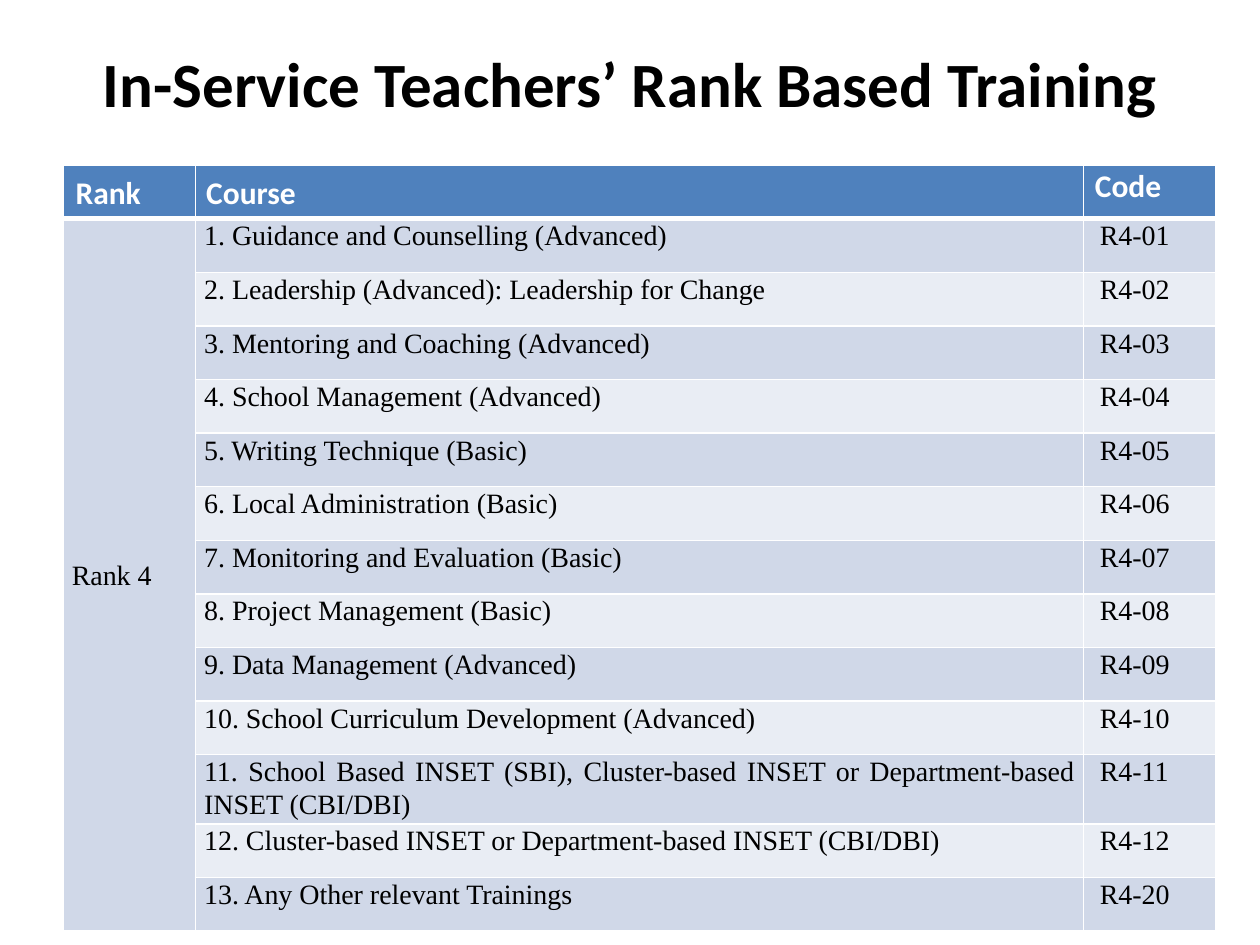
from lxml import etree
from pptx import Presentation
from pptx.dml.color import RGBColor
from pptx.enum.text import MSO_ANCHOR, MSO_AUTO_SIZE, PP_ALIGN
from pptx.oxml.ns import qn
from pptx.util import Inches, Pt

TITLE = "In-Service Teachers’ Rank Based Training"
HEADINGS = ("Rank", " Course", "Code")
RANK = "Rank 4"
COURSES = [
    ("Guidance and Counselling (Advanced)", "R4-01"),
    ("Leadership (Advanced): Leadership for Change", "R4-02"),
    ("Mentoring and Coaching (Advanced)", "R4-03"),
    ("School Management (Advanced)", "R4-04"),
    ("Writing Technique (Basic)", "R4-05"),
    ("Local Administration (Basic)", "R4-06"),
    ("Monitoring and Evaluation (Basic)", "R4-07"),
    ("Project Management (Basic)", "R4-08"),
    ("Data Management (Advanced)", "R4-09"),
    ("School Curriculum Development (Advanced)", "R4-10"),
    ("School Based INSET (SBI), Cluster-based INSET or Department-based "
     "INSET (CBI/DBI)", "R4-11"),
    ("Cluster-based INSET or Department-based INSET (CBI/DBI)", "R4-12"),
    ("Any Other relevant Trainings", "R4-20"),
]
THEME = {
    "title": {"name": "Calibri", "size": Pt(36), "bold": True, "color": "000000"},
    "heading": {"name": "Calibri", "size": Pt(18), "bold": True, "color": "FFFFFF"},
    "body": {"name": "Times New Roman", "size": Pt(16), "bold": False, "color": "000000"},
    "heading_fill": "4F81BD",
    "bands": ("D0D8E8", "E9EDF4"),
    "border": "FFFFFF",
}
COLUMN_WIDTHS = (1.05, 7.05, 1.05)
TABLE_LEFT, TABLE_TOP, TABLE_HEIGHT = 0.5, 1.31, 6.08
LONG_ROW, LONG_HEIGHT = 11, 0.55
CODE_INDENT = 0.06
RANK_COLUMN, COURSE_COLUMN, CODE_COLUMN = range(3)
# left, top, right, bottom
HEADING_MARGINS = ((0.1, 0.05, 0.1, 0.05), (0.03, 0, 0.08, 0), (0.03, 0, 0.08, 0))
BODY_MARGINS = (0.07, 0, 0.07, 0)


def set_all(target, values):
    for attribute, value in values.items():
        setattr(target, attribute, value)


def style_font(font, style):
    set_all(font, {key: value for key, value in style.items() if key != "color"})
    font.color.rgb = RGBColor.from_string(style["color"])


def add_borders(cell, widths):
    """Draw cell edges; widths maps L, R, T and B, in that order, to points."""
    properties = cell._tc.get_or_add_tcPr()
    for side, width in widths.items():
        line = etree.SubElement(properties, qn(f"a:ln{side}"), w=str(Pt(width)))
        fill = etree.SubElement(line, qn("a:solidFill"))
        etree.SubElement(fill, qn("a:srgbClr"), val=THEME["border"])


def format_cell(cell, row, column):
    heading = row == 0
    add_borders(cell, {"L": 1, "R": 1, "T": 3 if row == 1 else 1, "B": 3 if heading else 1})
    band = 0 if column == RANK_COLUMN else (row - 1) % 2
    cell.fill.solid()
    cell.fill.fore_color.rgb = RGBColor.from_string(
        THEME["heading_fill"] if heading else THEME["bands"][band])

    margins = HEADING_MARGINS[column] if heading else BODY_MARGINS
    sides = ("margin_left", "margin_top", "margin_right", "margin_bottom")
    set_all(cell, dict(zip(sides, map(Inches, margins))))
    middle = column == (COURSE_COLUMN if heading else RANK_COLUMN)
    cell.vertical_anchor = MSO_ANCHOR.MIDDLE if middle else MSO_ANCHOR.TOP

    paragraph = cell.text_frame.paragraphs[0]
    paragraph.line_spacing = 1.07
    rank_body = column == RANK_COLUMN and not heading
    paragraph.alignment = PP_ALIGN.LEFT if rank_body else PP_ALIGN.JUSTIFY
    if column == CODE_COLUMN:
        paragraph._p.get_or_add_pPr().set("marL", str(Inches(CODE_INDENT)))
    for run in paragraph.runs:
        style_font(run.font, THEME["heading" if heading else "body"])


def add_title(slide):
    title = slide.shapes.title
    set_all(title, {"left": Inches(0.5), "top": Inches(0.13),
                    "width": Inches(9), "height": Inches(0.94)})
    frame = title.text_frame
    frame.text = TITLE
    set_all(frame, {"word_wrap": True, "auto_size": MSO_AUTO_SIZE.NONE,
                    "vertical_anchor": MSO_ANCHOR.MIDDLE, "margin_top": Inches(0.15)})
    paragraph = frame.paragraphs[0]
    paragraph.alignment = PP_ALIGN.CENTER
    style_font(paragraph.runs[0].font, THEME["title"])


def add_course_table(slide):
    rows = [HEADINGS] + [
        (RANK if number == 1 else "", f"{number}. {course}", code)
        for number, (course, code) in enumerate(COURSES, 1)
    ]
    table = slide.shapes.add_table(
        len(rows), len(HEADINGS), Inches(TABLE_LEFT), Inches(TABLE_TOP),
        Inches(sum(COLUMN_WIDTHS)), Inches(TABLE_HEIGHT)).table
    table.horz_banding = False
    for column, width in zip(table.columns, COLUMN_WIDTHS):
        column.width = Inches(width)

    row_height = (TABLE_HEIGHT - LONG_HEIGHT) / (len(rows) - 1)
    for row, texts in enumerate(rows):
        table.rows[row].height = Inches(LONG_HEIGHT if row == LONG_ROW else row_height)
        for column, text in enumerate(texts):
            cell = table.cell(row, column)
            cell.text = text
            format_cell(cell, row, column)
    table.cell(1, RANK_COLUMN).merge(table.cell(len(COURSES), RANK_COLUMN))


def main():
    deck = Presentation()
    set_all(deck, {"slide_width": Inches(10), "slide_height": Inches(7.5)})
    slide = deck.slides.add_slide(deck.slide_layouts.get_by_name("Title Only"))
    add_title(slide)
    add_course_table(slide)
    deck.save("out.pptx")


if __name__ == "__main__":
    main()
